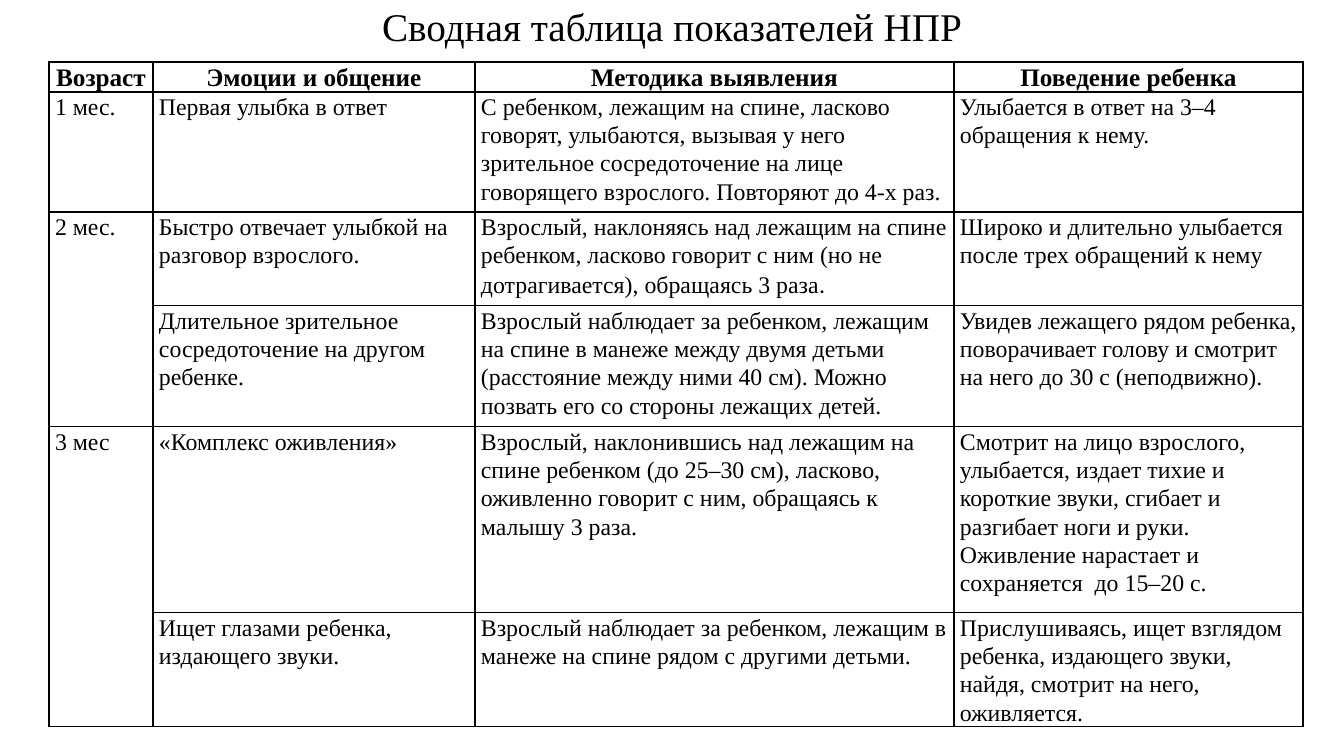
"""Build a slide with the summary table of child development indicators."""
from lxml.etree import SubElement
from pptx import Presentation
from pptx.dml.color import RGBColor
from pptx.enum.text import MSO_ANCHOR as Anchor, PP_ALIGN as Align
from pptx.oxml.ns import qn
from pptx.util import Pt

PX = 9071.43
FONT = "Times New Roman"
INK = "000000"
COLUMN_WIDTHS = [104, 322, 479, 349]
ROW_HEIGHTS = [30, 120, 94, 121, 186, 114]
ROWS = [
    ["Возраст", "Эмоции и общение", "Методика выявления", "Поведение ребенка"],
    ["1 мес.", "Первая улыбка в ответ",
     "С ребенком, лежащим на спине, ласково говорят, улыбаются, вызывая у него "
     "зрительное сосредоточение на лице говорящего взрослого. Повторяют до 4-х раз.",
     "Улыбается в ответ на 3–4 обращения к нему."],
    ["2 мес.", "Быстро отвечает улыбкой на разговор взрослого.",
     "Взрослый, наклоняясь над лежащим на спине ребенком, ласково говорит с ним "
     "(но не дотрагивается), обращаясь 3 раза",
     "Широко и длительно улыбается после трех обращений к нему"],
    ["", "Длительное зрительное сосредоточение на другом ребенке.",
     "Взрослый наблюдает за ребенком, лежащим на спине в манеже между двумя детьми "
     "(расстояние между ними 40 см). Можно позвать его со стороны лежащих детей.",
     "Увидев лежащего рядом ребенка, поворачивает голову и смотрит на него "
     "до 30 с (неподвижно)."],
    ["3 мес", "«Комплекс оживления»",
     "Взрослый, наклонившись над лежащим на спине ребенком (до 25–30 см), ласково, "
     "оживленно говорит с ним, обращаясь к малышу 3 раза.",
     "Смотрит на лицо взрослого, улыбается, издает тихие и короткие звуки, сгибает и "
     "разгибает ноги и руки. Оживление нарастает и сохраняется  до 15–20 с."],
    ["", "Ищет глазами ребенка, издающего звуки.",
     "Взрослый наблюдает за ребенком, лежащим в манеже на спине рядом с другими детьми.",
     "Прислушиваясь, ищет взглядом ребенка, издающего звуки, найдя, смотрит на него, "
     "оживляется."],
]


def px(length):
    return round(length * PX)


def style(span, size, bold=False, name=FONT):
    span.font.name = name
    span.font.size = Pt(size)
    span.font.bold = bold
    span.font.color.rgb = RGBColor.from_string(INK)


deck = Presentation()
deck.slide_width, deck.slide_height = px(1344), px(756)
page = deck.slides.add_slide(deck.slide_layouts[5])

title = page.shapes.title
title.left, title.top, title.width, title.height = px(292), px(0), px(760), px(58)
title.text_frame.text = "Сводная таблица показателей НПР"
title.text_frame.vertical_anchor = Anchor.MIDDLE
heading = title.text_frame.paragraphs[0]
heading.alignment = Align.CENTER
heading.line_spacing = 0.9
style(heading.runs[0], 28)

table = page.shapes.add_table(
    len(ROWS), len(COLUMN_WIDTHS), px(49), px(62),
    px(sum(COLUMN_WIDTHS)), px(sum(ROW_HEIGHTS))).table
table.first_row = table.horz_banding = False
for column, width in zip(table.columns, COLUMN_WIDTHS):
    column.width = px(width)
for row, height in zip(table.rows, ROW_HEIGHTS):
    row.height = px(height)

for row_index, texts in enumerate(ROWS):
    header = row_index == 0
    for column_index, text in enumerate(texts):
        cell = table.cell(row_index, column_index)
        cell.margin_left = cell.margin_right = px(6)
        cell.margin_top = cell.margin_bottom = 0
        properties = cell._tc.get_or_add_tcPr()
        for side in ("a:lnL", "a:lnR", "a:lnT", "a:lnB"):
            border = SubElement(properties, qn(side), w=str(Pt(1)))
            paint = SubElement(border, qn("a:solidFill"))
            SubElement(paint, qn("a:srgbClr"), val=INK)
        cell.fill.background()
        if text:
            cell.text_frame.text = text
            para = cell.text_frame.paragraphs[0]
            para.alignment = Align.CENTER if header else Align.LEFT
            para.line_spacing = 1.07
            style(para.runs[0], 18 if header else 17, header)

full_stop = table.cell(2, 2).text_frame.paragraphs[0].add_run()
full_stop.text = "."
style(full_stop, 17, name="Calibri")

for first_row in (2, 4):
    table.cell(first_row, 0).merge(table.cell(first_row + 1, 0))

deck.save("out.pptx")
